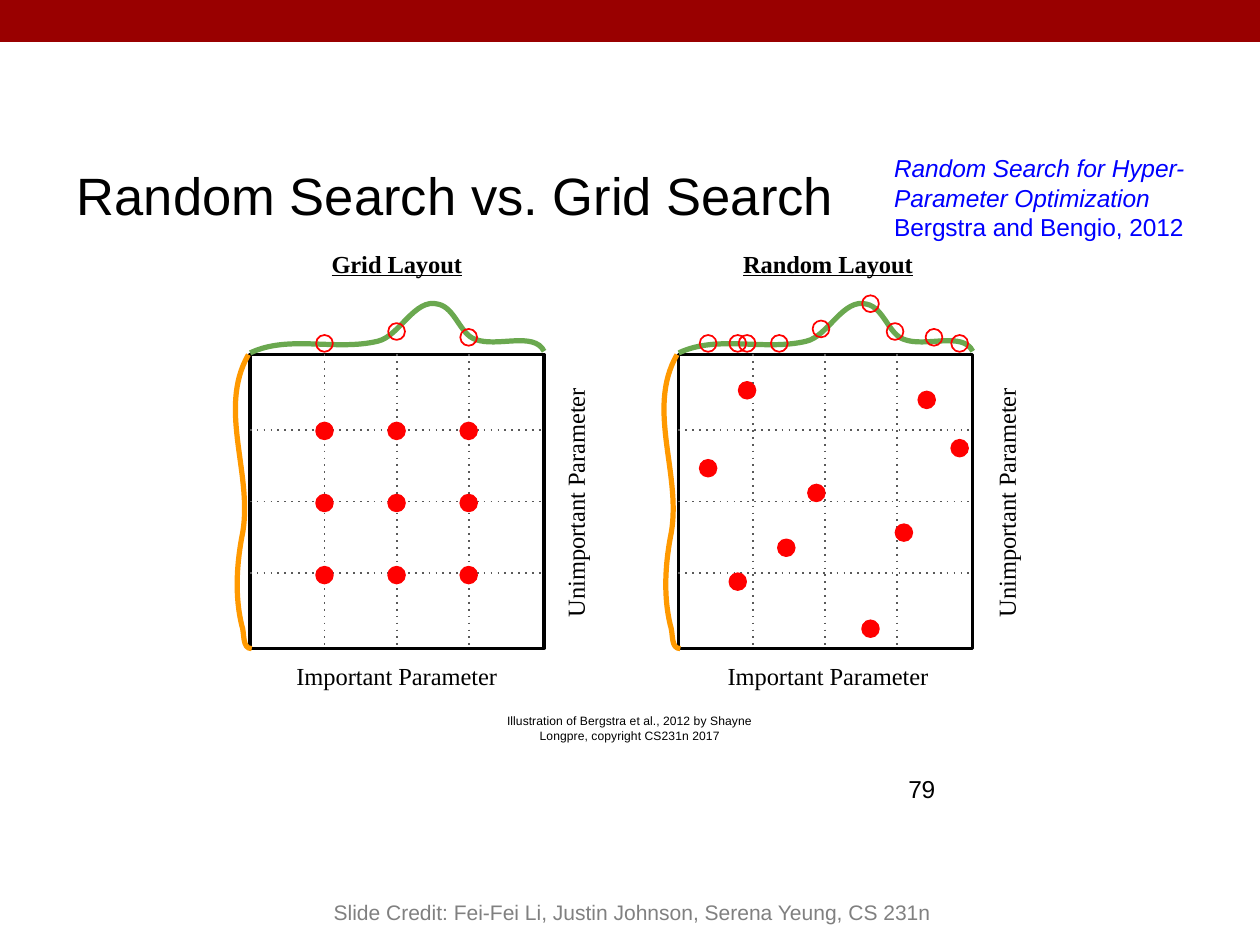
from lxml import etree
from pptx import Presentation
from pptx.dml.color import RGBColor
from pptx.enum import dml, shapes, text
from pptx.oxml import ns
from pptx.util import Pt

COLORS = {"bar": "990000", "ink": "000000", "grid": "595959", "dot": "FF0000",
          "unimportant": "FF9900", "important": "6AA84F", "citation": "0000FF",
          "credit": "808080"}
SANS, SERIF = "Arial", "Times New Roman"
TOP, SIDE, DOT = 151.9, 126, 7.2
GRID_X = [32 + 30.9 * i for i in range(3)]
GRID_Y = [32.4 + 30.65 * i for i in range(3)]
DOT_Y = [32.8 + 30.9 * i for i in range(3)]

presentation = Presentation()
presentation.slide_width, presentation.slide_height = Pt(540), Pt(405)
slide = presentation.slides.add_slide(presentation.slide_layouts[5])


def write(shape, box, lines, size, color="ink", font=SANS, align="LEFT",
          anchor="TOP", inset=5.04, bold=None, underline=None):
    shape.left, shape.top, shape.width, shape.height = map(Pt, box)
    frame = shape.text_frame
    frame.word_wrap = True
    frame.auto_size = text.MSO_AUTO_SIZE.NONE
    frame.vertical_anchor = text.MSO_ANCHOR[anchor]
    frame.margin_left = frame.margin_right = Pt(inset)
    frame.margin_top = frame.margin_bottom = Pt(inset)
    for index, (words, italic) in enumerate(lines):
        paragraph = frame.add_paragraph() if index else frame.paragraphs[0]
        paragraph.alignment = text.PP_ALIGN[align]
        run = paragraph.add_run()
        run.text = words
        run.font.name, run.font.size = font, Pt(size)
        run.font.bold, run.font.italic = bold, italic
        run.font.underline = underline
        run.font.color.rgb = RGBColor.from_string(COLORS[color])


def paint(shape, fill=None, line=None, weight=0.75):
    shape.shadow.inherit = False
    if fill:
        shape.fill.solid()
        shape.fill.fore_color.rgb = RGBColor.from_string(COLORS[fill])
    else:
        shape.fill.background()
    if line:
        shape.line.color.rgb = RGBColor.from_string(COLORS[line])
        shape.line.width = Pt(weight)
    else:
        shape.line.fill.background()


bar = slide.shapes.add_shape(shapes.MSO_SHAPE.RECTANGLE, 0, 0, Pt(540), Pt(18))
paint(bar, fill="bar")
write(slide.shapes.title, (27.8, 64.8, 504, 54),
      [("Random Search vs. Grid Search", None)], 22.5)

curves = {
    "unimportant": ((-6.5, 0.1, 0.8, 126.1),
                    [(0.8, 126.1), (-3.5, 126.1), (-2.1, 119.6), (-3.5, 116),
                     (-6.4, 103.8), (-5.7, 90.8), (-3.5, 78.6),
                     (2.2, 52.7), (-14.3, 23.9), (-0.6, 0.1)]),
    "important": ((0.1, -21.7, 126.1, -0.6),
                  [(0.1, -0.6), (16.6, -8.5), (36.8, -1.3), (54.8, -5.6),
                   (64.2, -7.8), (70.6, -24.4), (80.7, -21.5),
                   (87.9, -20), (90.1, -8.5), (96.6, -6.4),
                   (105.9, -2.8), (121.8, -10), (126.1, -1.3)]),
}
panels = [
    {"name": "Grid Layout", "left": 107.1, "label": 112.5, "side": 187.3,
     "dots": [(x, y) for x in GRID_X for y in DOT_Y],
     "rings": list(zip(GRID_X, [-4.7, -9.8, -7.3]))},
    {"name": "Random Layout", "left": 290.8, "label": 297.3, "side": 372,
     "dots": [(12.7, 48.8), (25.4, 97.4), (29.4, 15.4), (59.1, 59.4),
              (82.3, 117.6), (46.2, 82.9), (96.6, 76.4), (106.4, 19.5),
              (120.5, 40.2)],
     "rings": [(12.7, -4.7), (25.4, -4.7), (29.4, -4.7), (43.2, -4.7),
               (61.1, -10.9), (82.3, -21.7), (92.8, -9.8), (109.5, -7.3),
               (120.5, -4.7)]},
]

for panel in panels:
    left = panel["left"]
    square = slide.shapes.add_shape(shapes.MSO_SHAPE.RECTANGLE,
                                    Pt(left), Pt(TOP), Pt(SIDE), Pt(SIDE))
    paint(square, line="ink", weight=1.5)

    grid_lines = [(x, 0, x, SIDE) for x in GRID_X] + [(0, y, SIDE, y) for y in GRID_Y]
    for x1, y1, x2, y2 in grid_lines:
        line = slide.shapes.add_connector(
            shapes.MSO_CONNECTOR.STRAIGHT, Pt(left + x1), Pt(TOP + y1),
            Pt(left + x2), Pt(TOP + y2))
        line.line.color.rgb = RGBColor.from_string(COLORS["grid"])
        line.line.width = Pt(0.75)
        line.line.dash_style = dml.MSO_LINE.ROUND_DOT
        line._element.spPr.find(".//" + ns.qn("a:prstDash")).set("val", "dot")
        etree.SubElement(line._element.spPr, ns.qn("a:effectLst"))

    for color, ((x1, y1, x2, y2), points) in curves.items():
        builder = slide.shapes.build_freeform(Pt(left + x1), Pt(TOP + y1))
        builder.add_line_segments([(Pt(left + x2), Pt(TOP + y2))], close=False)
        curve = builder.convert_to_shape()
        outline = curve._element.spPr.find(".//" + ns.qn("a:path"))
        for segment in list(outline):
            outline.remove(segment)
        for index, (x, y) in enumerate(points):
            if index == 0:
                segment = etree.SubElement(outline, ns.qn("a:moveTo"))
            elif index % 3 == 1:
                segment = etree.SubElement(outline, ns.qn("a:cubicBezTo"))
            etree.SubElement(segment, ns.qn("a:pt"),
                             x=str(int(Pt(x - x1))), y=str(int(Pt(y - y1))))
        paint(curve, line=color, weight=2.25)

    for centers, fill in ((panel["dots"], "dot"), (panel["rings"], None)):
        for x, y in centers:
            marker = slide.shapes.add_shape(
                shapes.MSO_SHAPE.OVAL, Pt(left + x - DOT / 2), Pt(TOP + y - DOT / 2),
                Pt(DOT), Pt(DOT))
            paint(marker, fill=fill, line="dot")

    labels = [
        (panel["name"], panel["label"], 101.5, 0, True),
        ("Important Parameter", panel["label"], 278.3, 0, None),
        ("Unimportant Parameter", panel["side"], 205.7, 270, None),
    ]
    for words, x, y, rotation, heading in labels:
        label = slide.shapes.add_textbox(0, 0, 0, 0)
        write(label, (x, y, 115.2, 19.4), [(words, None)], 10.5, font=SERIF,
              align="CENTER", bold=heading, underline=heading)
        label.rotation = rotation

write(slide.shapes.add_textbox(0, 0, 0, 0), (207, 300.6, 126, 29.5),
      [("Illustration of Bergstra et al., 2012 by Shayne Longpre, copyright CS231n 2017", None)],
      5.25, align="CENTER")
write(slide.shapes.add_textbox(0, 0, 0, 0), (378.2, 60.6, 161.8, 29.5),
      [("Random Search for Hyper-Parameter Optimization", True),
       ("Bergstra and Bengio, 2012", False)], 10.5, color="citation")
write(slide.shapes.add_textbox(0, 0, 0, 0), (384.2, 326.5, 32.4, 23),
      [("79", None)], 10.5, anchor="MIDDLE")
write(slide.shapes.add_textbox(0, 0, 0, 0), (57.7, 364, 426.2, 36),
      [("Slide Credit: Fei-Fei Li, Justin Johnson, Serena Yeung, CS 231n", None)],
      9, color="credit", align="CENTER", anchor="BOTTOM", inset=3.6)

presentation.save("out.pptx")
